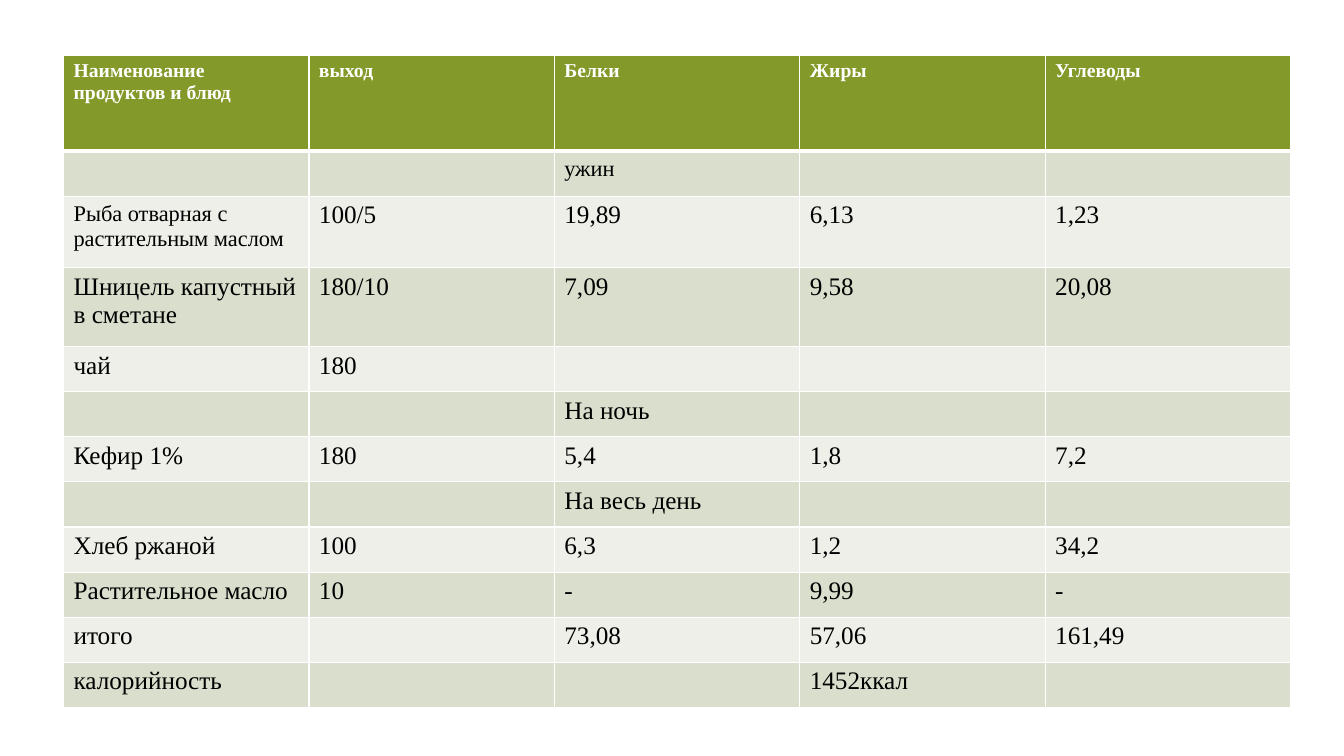
from lxml.etree import SubElement
from pptx import Presentation
from pptx.dml.color import RGBColor
from pptx.oxml.ns import qn
from pptx.util import Inches, Pt

FONT = "Times New Roman"
WHITE, BLACK = "FFFFFF", "000000"
HEADER_FILL = "83992A"
BAND_FILLS = ("D9DECD", "EDEFE8")
COLUMN_WIDTH = 2.434
ROW_HEIGHT = 0.448
TALL_ROWS = {0: 0.95, 2: 0.71, 3: 0.78}
SMALL_CELLS = {(1, 2), (2, 0)}
MENU = [
    ("Наименование продуктов и блюд", "выход", "Белки", "Жиры", "Углеводы"),
    ("", "", "ужин", "", ""),
    ("Рыба отварная с растительным маслом", "100/5", "19,89", "6,13", "1,23"),
    ("Шницель капустный в сметане", "180/10", "7,09", "9,58", "20,08"),
    ("чай", "180", "", "", ""),
    ("", "", "На ночь", "", ""),
    ("Кефир 1%", "180", "5,4", "1,8", "7,2"),
    ("", "", "На весь день", "", ""),
    ("Хлеб ржаной", "100", "6,3", "1,2", "34,2"),
    ("Растительное масло", "10", "-", "9,99", "-"),
    ("итого", "", "73,08", "57,06", "161,49"),
    ("калорийность", "", "", "1452ккал", ""),
]


def color(value):
    """Turn a hex string into a colour."""
    return RGBColor.from_string(value)


def set_borders(cell, top=1, bottom=1):
    """Draw white borders around a cell, with widths in points."""
    properties = cell._tc.get_or_add_tcPr()
    widths = {"a:lnL": 1, "a:lnR": 1, "a:lnT": top, "a:lnB": bottom}
    for tag, width in widths.items():
        line = SubElement(properties, qn(tag), w=str(Pt(width)))
        fill = SubElement(line, qn("a:solidFill"))
        SubElement(fill, qn("a:srgbClr"), val=WHITE)


def fill_cell(cell, text, background, size, text_color, bold):
    """Set the background and the text of a cell."""
    cell.fill.solid()
    cell.fill.fore_color.rgb = color(background)
    para = cell.text_frame.paragraphs[0]
    para.text = text
    para.font.size = Pt(size)
    for span in para.runs:
        span.font.name = FONT
        span.font.size = Pt(size)
        span.font.bold = bold
        span.font.color.rgb = color(text_color)


def add_menu_table(page, left, top):
    """Add the menu with a header row and banded body rows."""
    heights = [TALL_ROWS.get(row, ROW_HEIGHT) for row in range(len(MENU))]
    columns = len(MENU[0])
    frame = page.shapes.add_table(
        len(MENU), columns, Inches(left), Inches(top),
        Inches(COLUMN_WIDTH * columns), Inches(sum(heights)))
    table = frame.table
    table.horz_banding = False
    for column in table.columns:
        column.width = Inches(COLUMN_WIDTH)
    for row, texts in enumerate(MENU):
        table.rows[row].height = Inches(heights[row])
        for column, text in enumerate(texts):
            cell = table.cell(row, column)
            set_borders(cell, top=3 if row == 1 else 1, bottom=3 if row == 0 else 1)
            if row == 0:
                fill_cell(cell, text, HEADER_FILL, 14, WHITE, True)
            else:
                size = 16 if (row, column) in SMALL_CELLS else 18
                fill_cell(cell, text, BAND_FILLS[(row - 1) % 2], size, BLACK, False)


def main():
    """Build the slide and save the deck."""
    deck = Presentation()
    deck.slide_width = Inches(13.33)
    deck.slide_height = Inches(7.5)
    page = deck.slides.add_slide(deck.slide_layouts[6])
    add_menu_table(page, 0.63, 0.55)
    deck.save("out.pptx")


if __name__ == "__main__":
    main()
